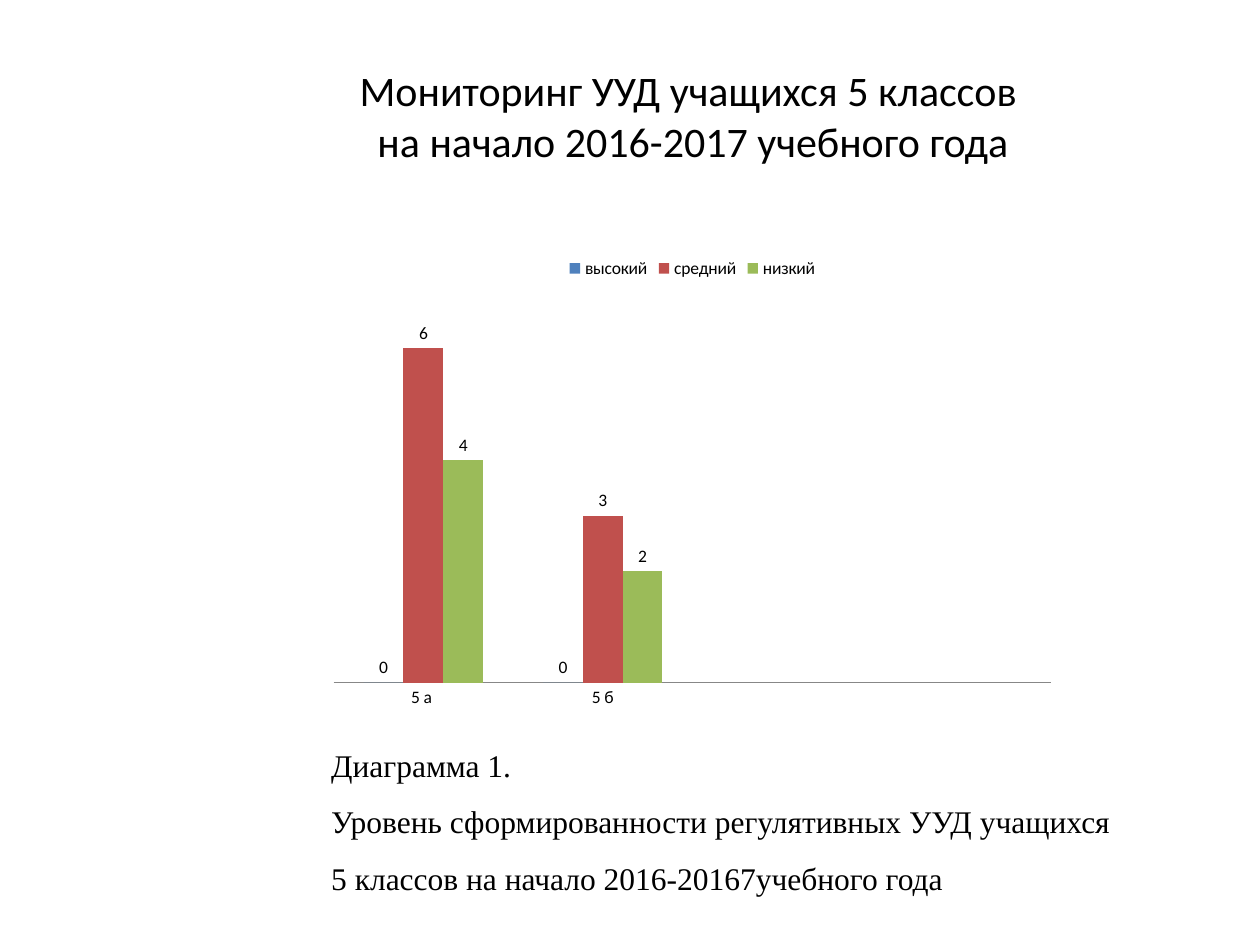
import pptx
import pptx.chart.data
import pptx.dml.color
import pptx.enum.chart
import pptx.enum.text
import pptx.util

COLORS = {
    "text": "000000",
    "axis": "878787",
    "высокий": "4F81BD",
    "средний": "C0504D",
    "низкий": "9BBB59",
}


def rgb(name):
    return pptx.dml.color.RGBColor.from_string(COLORS[name])


def inches(*lengths):
    return [pptx.util.Inches(length) for length in lengths]


class SlideBuilder:
    heading_font = "Calibri"
    caption_font = "Times New Roman"

    def __init__(self, deck):
        self.slide = deck.slides.add_slide(deck.slide_layouts[5])

    def style(self, font, name, size):
        font.name = name
        font.size = pptx.util.Pt(size)
        font.color.rgb = rgb("text")

    def title(self, text, place):
        box = self.slide.shapes.title
        box.left, box.top, box.width, box.height = inches(*place)
        frame = box.text_frame
        frame.vertical_anchor = pptx.enum.text.MSO_ANCHOR.MIDDLE
        para = frame.paragraphs[0]
        para.text = text
        para.alignment = pptx.enum.text.PP_ALIGN.CENTER
        self.style(para.font, self.heading_font, 24)

    def column_chart(self, categories, series, place):
        data = pptx.chart.data.CategoryChartData()
        data.categories = categories
        for name, values in series.items():
            data.add_series(name, values)
        chart = self.slide.shapes.add_chart(
            pptx.enum.chart.XL_CHART_TYPE.COLUMN_CLUSTERED, *inches(*place), data
        ).chart
        self.style(chart.font, self.heading_font, 10)
        chart.has_title = False
        chart.has_legend = True
        chart.legend.position = pptx.enum.chart.XL_LEGEND_POSITION.TOP
        chart.legend.include_in_layout = False

        chart.category_axis.major_tick_mark = pptx.enum.chart.XL_TICK_MARK.NONE
        chart.category_axis.format.line.color.rgb = rgb("axis")
        value_axis = chart.value_axis
        value_axis.visible = False
        value_axis.has_major_gridlines = False
        value_axis.minimum_scale = 0
        value_axis.maximum_scale = 7

        plot = chart.plots[0]
        plot.gap_width = 150
        plot.overlap = 0
        plot.vary_by_categories = False
        for column in plot.series:
            column.format.fill.solid()
            column.format.fill.fore_color.rgb = rgb(column.name)
            column.data_labels.show_value = True
            column.data_labels.position = (
                pptx.enum.chart.XL_LABEL_POSITION.OUTSIDE_END
            )

    def caption(self, lines, place):
        frame = self.slide.shapes.add_textbox(*inches(*place)).text_frame
        frame.word_wrap = True
        frame.auto_size = pptx.enum.text.MSO_AUTO_SIZE.SHAPE_TO_FIT_TEXT
        frame.text = "\n".join(lines)
        for para in frame.paragraphs:
            para.line_spacing = 1.5
            self.style(para.font, self.caption_font, 18)


def main():
    deck = pptx.Presentation()
    deck.slide_width, deck.slide_height = inches(10, 7.5)
    builder = SlideBuilder(deck)
    builder.title(
        "Мониторинг УУД учащихся 5 классов \vна начало 2016-2017 учебного года",
        (1, 0.29, 9, 1.25),
    )
    builder.column_chart(
        ["5 а ", "5 б", "", ""],
        {
            "высокий": (0, 0, None, None),
            "средний": (6, 3, None, None),
            "низкий": (4, 2, None, None),
        },
        (2.53, 1.94, 5.93, 3.75),
    )
    builder.caption(
        [
            "Диаграмма 1.",
            "Уровень сформированности регулятивных УУД учащихся",
            "5 классов на начало 2016-20167учебного года",
        ],
        (2.53, 5.72, 7.19, 1.46),
    )
    deck.save("out.pptx")


if __name__ == "__main__":
    main()
